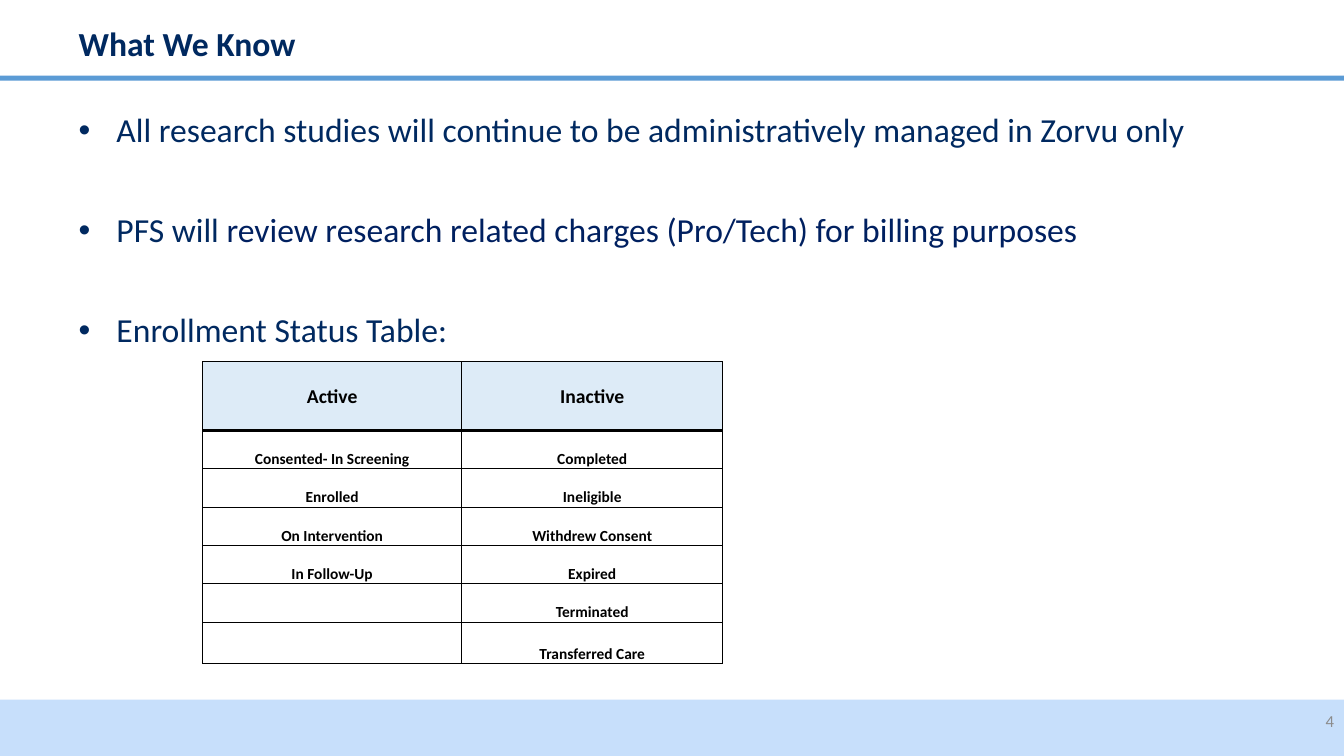
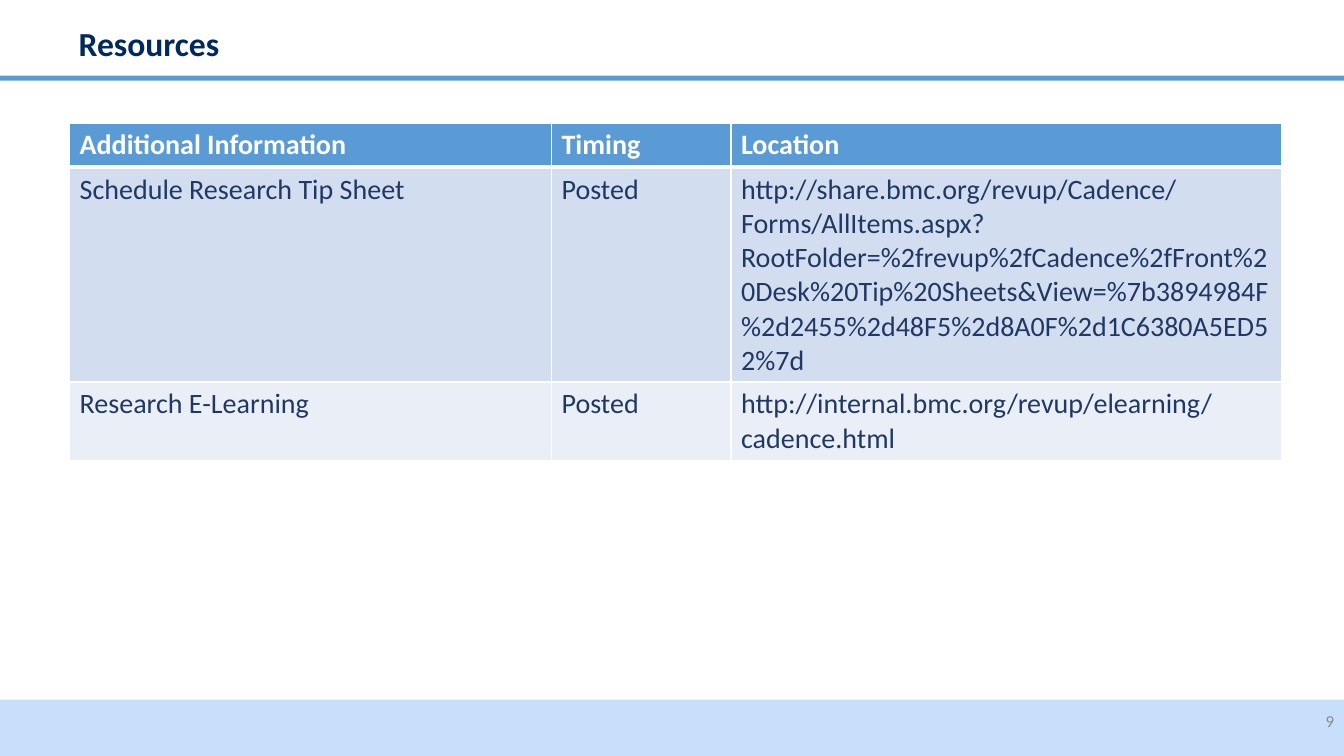
from dataclasses import dataclass

from lxml import etree
from pptx import Presentation
from pptx.dml.color import RGBColor
from pptx.enum.shapes import MSO_SHAPE
from pptx.enum.text import MSO_ANCHOR, MSO_AUTO_SIZE, PP_ALIGN
from pptx.oxml.ns import qn
from pptx.util import Emu, Pt

RECTANGLE = MSO_SHAPE.RECTANGLE
LEFT, CENTER, RIGHT = PP_ALIGN.LEFT, PP_ALIGN.CENTER, PP_ALIGN.RIGHT
TOP, MIDDLE, BOTTOM = MSO_ANCHOR.TOP, MSO_ANCHOR.MIDDLE, MSO_ANCHOR.BOTTOM
NO_AUTOFIT = MSO_AUTO_SIZE.NONE

EMU_PER_PX = 9144  # 100 px to the inch
TITLE_AND_CONTENT, TITLE_ONLY = 1, 5


@dataclass(frozen=True)
class Theme:
    font: str = "Calibri"
    navy: str = "002960"
    deep_blue: str = "002060"
    table_navy: str = "203864"
    blue: str = "5B9BD5"
    footer_blue: str = "C7DFFB"
    header_tint: str = "DDEBF7"
    band_dark: str = "D2DEEF"
    band_light: str = "EAEFF7"
    gray: str = "8C8C8C"
    black: str = "000000"
    white: str = "FFFFFF"
    heading_size: int = 24
    resource_size: int = 20
    status_header_size: int = 14
    status_size: int = 11
    number_size: int = 12
    line_spacing: float = 0.9
    bullet_gap: float = 45.5


THEME = Theme()


@dataclass(frozen=True)
class Box:
    left: int
    top: int
    width: int
    height: int

    def emu(self) -> tuple:
        return tuple(px(v) for v in (self.left, self.top, self.width, self.height))


@dataclass(frozen=True)
class Band:
    box: Box
    color: str


@dataclass(frozen=True)
class CellStyle:
    size: int
    color: str
    bold: bool
    anchor: MSO_ANCHOR


@dataclass(frozen=True)
class Borders:
    color: str
    outer: float
    inner: float
    header_rule: float


@dataclass(frozen=True)
class TableDesign:
    header: CellStyle
    body: CellStyle
    fills: tuple  # header first, then one per body row in turn; None is clear
    borders: Borders
    align: PP_ALIGN
    margins: tuple  # left, top, right, bottom


SLIDE_WIDTH, SLIDE_HEIGHT = 1333, 750
BANDS = (
    Band(Box(0, 694, SLIDE_WIDTH, 56), THEME.footer_blue),
    Band(Box(0, 75, SLIDE_WIDTH, 5), THEME.blue),
)
TITLE_BOX = Box(68, 14, 1101, 62)
BODY_BOX = Box(68, 108, 1198, 563)
NUMBER_BOX = Box(1033, 695, 300, 40)

STATUS_DESIGN = TableDesign(
    header=CellStyle(THEME.status_header_size, THEME.black, True, MIDDLE),
    body=CellStyle(THEME.status_size, THEME.black, True, BOTTOM),
    fills=(THEME.header_tint, None),
    borders=Borders(THEME.black, outer=1, inner=0.5, header_rule=2),
    align=CENTER,
    margins=(1, 1, 1, 0),
)
RESOURCE_DESIGN = TableDesign(
    header=CellStyle(THEME.resource_size, THEME.white, True, TOP),
    body=CellStyle(THEME.resource_size, THEME.table_navy, False, TOP),
    fills=(THEME.blue, THEME.band_dark, THEME.band_light),
    borders=Borders(THEME.white, outer=1, inner=1, header_rule=3),
    align=LEFT,
    margins=(10, 5, 10, 5),
)

KNOWN_FACTS = (
    (("All research studies will continue to be administratively managed in Zorvu only",
      THEME.navy),),
    (("PFS will ", THEME.navy),
     ("review research related charges (Pro/Tech) for billing purposes", THEME.deep_blue)),
    (("Enrollment Status Table:", THEME.navy),),
)
STATUS_ROWS = (
    ("Active", "Inactive"),
    ("Consented- In Screening", "Completed"),
    ("Enrolled", "Ineligible"),
    ("On Intervention", "Withdrew Consent"),
    ("In Follow-Up", "Expired"),
    ("", "Terminated"),
    ("", "Transferred Care"),
)
RESOURCE_ROWS = (
    ("Additional Information", "Timing", "Location"),
    ("Schedule Research Tip Sheet", "Posted",
     "http://share.bmc.org/revup/Cadence/Forms/AllItems.aspx?RootFolder=%2frevup%2fCadence"
     "%2fFront%20Desk%20Tip%20Sheets&View=%7b3894984F%2d2455%2d48F5%2d8A0F%2d1C6380A5ED52%7d"),
    ("Research E-Learning", "Posted",
     "http://internal.bmc.org/revup/elearning/cadence.html"),
)


def px(value: int) -> Emu:
    return Emu(value * EMU_PER_PX)


def set_font(font, *, size: float, color: str, bold: bool = False) -> None:
    font.name = THEME.font
    font.size = Pt(size)
    font.bold = bold
    font.color.rgb = RGBColor.from_string(color)


def write_text(paragraph, text: str, *, size: float, color: str, bold: bool = False,
               align: PP_ALIGN = LEFT) -> None:
    """Append one formatted run; an empty text only sets the paragraph's font."""
    paragraph.alignment = align
    target = paragraph
    if text:
        target = paragraph.add_run()
        target.text = text
    set_font(target.font, size=size, color=color, bold=bold)


def place(shape, box: Box) -> None:
    shape.left, shape.top, shape.width, shape.height = box.emu()


def add_master_bands(presentation, slide) -> None:
    """Draw the bands on a slide, then move them behind everything on the master."""
    master_tree = presentation.slide_master.shapes.element
    for position, band in enumerate(BANDS, start=2):
        shape = slide.shapes.add_shape(RECTANGLE, *band.box.emu())
        shape.shadow.inherit = False
        shape.fill.solid()
        shape.fill.fore_color.rgb = RGBColor.from_string(band.color)
        shape.line.fill.background()
        master_tree.insert(position, shape.element)


def add_slide(presentation, layout: int, title: str, number: int):
    slide = presentation.slides.add_slide(presentation.slide_layouts[layout])
    heading = slide.shapes.title
    place(heading, TITLE_BOX)
    frame = heading.text_frame
    frame.auto_size = NO_AUTOFIT
    frame.vertical_anchor = MIDDLE
    paragraph = frame.paragraphs[0]
    paragraph.line_spacing = THEME.line_spacing
    write_text(paragraph, title, size=THEME.heading_size, color=THEME.navy, bold=True)

    number_frame = slide.shapes.add_textbox(*NUMBER_BOX.emu()).text_frame
    number_frame.word_wrap = True
    number_frame.vertical_anchor = MIDDLE
    write_text(number_frame.paragraphs[0], str(number), size=THEME.number_size,
               color=THEME.gray, align=RIGHT)
    return slide


def fill_bullets(placeholder, bullets: tuple) -> None:
    place(placeholder, BODY_BOX)
    frame = placeholder.text_frame
    frame.auto_size = NO_AUTOFIT
    for index, runs in enumerate(bullets):
        paragraph = frame.add_paragraph() if index else frame.paragraphs[0]
        paragraph.line_spacing = THEME.line_spacing
        paragraph.space_before = Pt(THEME.bullet_gap if index else 0)
        for text, color in runs:
            write_text(paragraph, text, size=THEME.heading_size, color=color)


def set_borders(cell, color: str, widths: dict) -> None:
    properties = cell._tc.get_or_add_tcPr()
    for position, (tag, width) in enumerate(widths.items()):
        line = etree.Element(qn(f"a:{tag}"), w=str(Pt(width)))
        fill = etree.SubElement(line, qn("a:solidFill"))
        etree.SubElement(fill, qn("a:srgbClr"), val=color)
        properties.insert(position, line)


def edge_widths(borders: Borders, row: int, column: int, rows: int, columns: int) -> dict:
    """Widths of a cell's four edges, in the order the file format asks for."""
    def horizontal(edge: int) -> float:
        if edge == 1:
            return borders.header_rule
        return borders.outer if edge in (0, rows) else borders.inner

    def vertical(edge: int) -> float:
        return borders.outer if edge in (0, columns) else borders.inner

    return {"lnL": vertical(column), "lnR": vertical(column + 1),
            "lnT": horizontal(row), "lnB": horizontal(row + 1)}


def format_cell(cell, text: str, style: CellStyle, fill: str | None,
                design: TableDesign) -> None:
    cell.margin_left, cell.margin_top, cell.margin_right, cell.margin_bottom = (
        px(margin) for margin in design.margins)
    cell.vertical_anchor = style.anchor
    if fill:
        cell.fill.solid()
        cell.fill.fore_color.rgb = RGBColor.from_string(fill)
    else:
        cell.fill.background()
    write_text(cell.text_frame.paragraphs[0], text, size=style.size, color=style.color,
               bold=style.bold, align=design.align)


def add_table(slide, left: int, top: int, widths: tuple, heights: tuple, rows: tuple,
              design: TableDesign) -> None:
    box = Box(left, top, sum(widths), sum(heights))
    table = slide.shapes.add_table(len(heights), len(widths), *box.emu()).table
    table.first_row = table.horz_banding = False
    for column, width in zip(table.columns, widths):
        column.width = px(width)
    header_fill, *body_fills = design.fills
    for row, (texts, height) in enumerate(zip(rows, heights)):
        table.rows[row].height = px(height)
        style = design.body if row else design.header
        fill = body_fills[(row - 1) % len(body_fills)] if row else header_fill
        for column, text in enumerate(texts):
            cell = table.cell(row, column)
            format_cell(cell, text, style, fill, design)
            set_borders(cell, design.borders.color,
                        edge_widths(design.borders, row, column, len(heights), len(widths)))


def main() -> None:
    presentation = Presentation()
    presentation.slide_width, presentation.slide_height = px(SLIDE_WIDTH), px(SLIDE_HEIGHT)

    known = add_slide(presentation, TITLE_AND_CONTENT, "What We Know", 4)
    add_master_bands(presentation, known)
    fill_bullets(known.placeholders[1], KNOWN_FACTS)
    add_table(known, 201, 359, (257, 259), (68, *[38] * 5, 41), STATUS_ROWS, STATUS_DESIGN)

    resources = add_slide(presentation, TITLE_ONLY, "Resources", 9)
    add_table(resources, 69, 122, (478, 178, 546), (44, 213, 78), RESOURCE_ROWS,
              RESOURCE_DESIGN)

    presentation.save("out.pptx")


if __name__ == "__main__":
    main()
